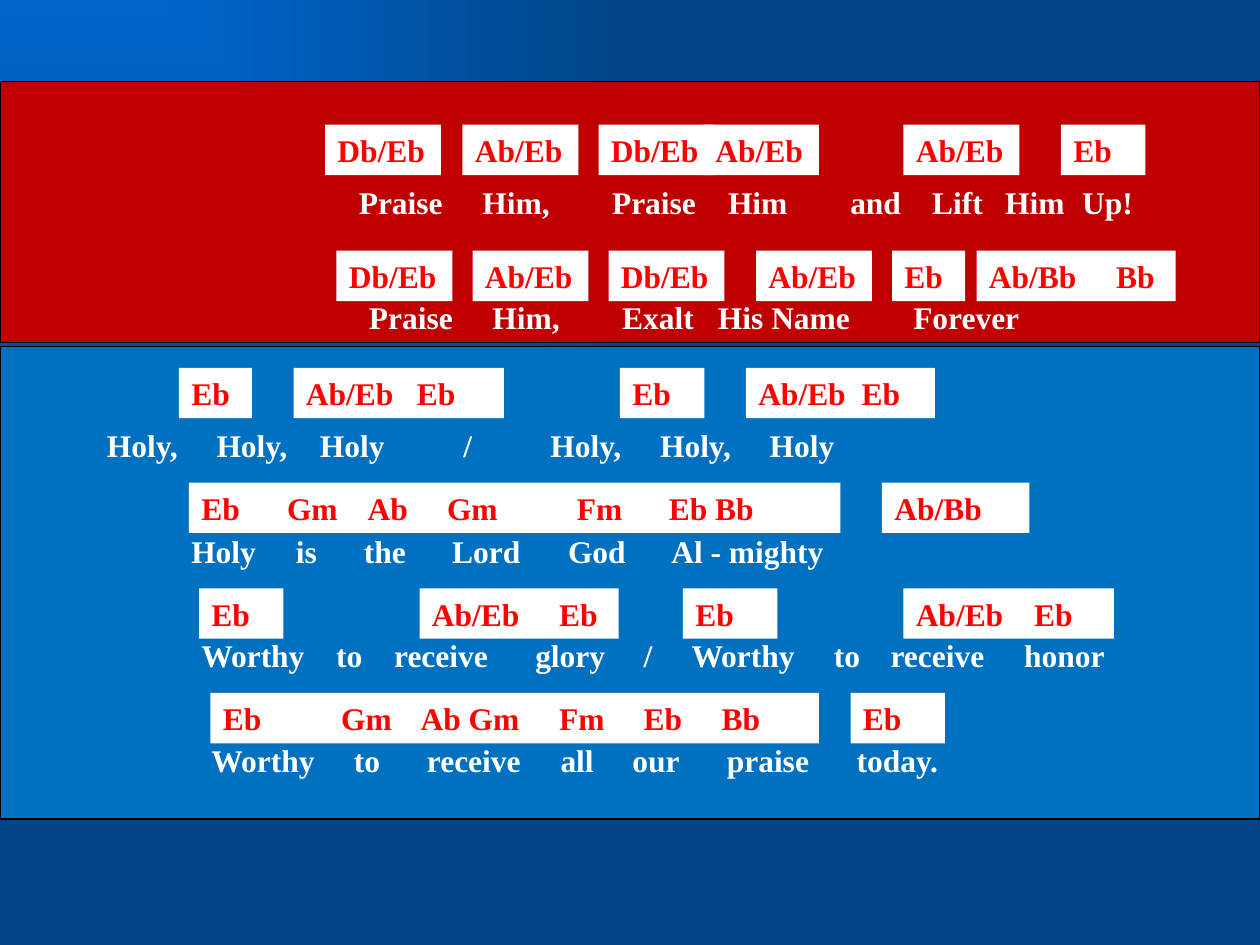
import dataclasses

import lxml.etree
import pptx
import pptx.dml.color
import pptx.enum.shapes
import pptx.enum.text
import pptx.oxml.ns
import pptx.shapes.autoshape
import pptx.slide
import pptx.util

Inches = pptx.util.Inches
qn = pptx.oxml.ns.qn


@dataclasses.dataclass(frozen=True)
class Theme:
    glow: str = "0066CC"
    backdrop: str = "004487"
    chorus: str = "C00000"
    verse: str = "0070C0"
    border: str = "000000"
    chord_fill: str = "FFFFFF"
    chord_text: str = "FF0000"
    lyric_text: str = "FFFFFF"
    font: str = "Times New Roman"
    text_size: float = 18
    border_width: float = 0.75


@dataclasses.dataclass(frozen=True)
class Section:
    top: float
    height: float
    color: str


@dataclasses.dataclass(frozen=True)
class Phrase:
    left: float
    width: float
    words: tuple[str, ...]
    stops: tuple[float, ...] = ()


@dataclasses.dataclass(frozen=True)
class SongLine:
    chord_top: float
    lyric_top: float
    lyric: Phrase
    chords: tuple[Phrase, ...]


THEME = Theme()
ROW_HEIGHT = 0.4
SLIDE_WIDTH = 10

SECTIONS = (
    Section(2.75, 3.75, THEME.verse),
    Section(0.65, 2.07, THEME.chorus),
)


def chord(left: float, width: float, *names: str, stops: tuple[float, ...] = ()) -> Phrase:
    return Phrase(left, width, names, stops)


SONG = (
    SongLine(
        0.99, 1.4,
        Phrase(2.75, 6.5, ("Praise", "Him,", "Praise", "Him", "and", "Lift", "Him", "Up!"),
               (0.98, 2.01, 2.93, 3.9, 4.55, 5.13, 5.74)),
        (chord(2.58, 0.92, "Db/Eb"), chord(3.67, 0.92, "Ab/Eb"),
         chord(4.75, 0.92, "Db/Eb"), chord(5.58, 0.92, "Ab/Eb"),
         chord(7.17, 0.92, "Ab/Eb"), chord(8.42, 0.67, "Eb")),
    ),
    SongLine(
        1.99, 2.32,
        Phrase(2.83, 6.5, ("Praise", "Him,", "Exalt", "His Name", "Forever"),
               (0.98, 2.01, 2.77, 4.32)),
        (chord(2.67, 0.92, "Db/Eb"), chord(3.75, 0.92, "Ab/Eb"),
         chord(4.83, 0.92, "Db/Eb"), chord(6, 0.92, "Ab/Eb"),
         chord(7.08, 0.58, "Eb"), chord(7.75, 1.58, "Ab/Bb", "Bb", stops=(1.01,))),
    ),
    SongLine(
        2.92, 3.33,
        Phrase(0.75, 7.42, ("Holy,", "Holy,", "Holy", "/", "Holy,", "Holy,", "Holy"),
               (0.87, 1.69, 2.83, 3.52, 4.39, 5.26)),
        (chord(1.42, 0.58, "Eb"), chord(2.33, 1.67, "Ab/Eb", "Eb", stops=(0.88,)),
         chord(4.92, 0.67, "Eb"), chord(5.92, 1.5, "Ab/Eb", "Eb", stops=(0.82,))),
    ),
    SongLine(
        3.83, 4.17,
        Phrase(1.42, 5.3, ("Holy", "is", "the", "Lord", "God", "Al - mighty"),
               (0.83, 1.37, 2.07, 2.99, 3.81)),
        (chord(1.5, 5.17, "Eb", "Gm", "Ab", "Gm", "Fm", "Eb Bb",
               stops=(0.68, 1.32, 1.95, 2.98, 3.71)),
         chord(7, 1.17, "Ab/Bb")),
    ),
    SongLine(
        4.67, 5,
        Phrase(1.5, 7.67,
               ("Worthy", "to", "receive", "glory", "/", "Worthy", "to", "receive", "honor"),
               (1.07, 1.53, 2.65, 3.51, 3.89, 5.02, 5.47, 6.53)),
        (chord(1.58, 0.67, "Eb"), chord(3.33, 1.58, "Ab/Eb", "Eb", stops=(1.01,)),
         chord(5.42, 0.75, "Eb"), chord(7.17, 1.67, "Ab/Eb", "Eb", stops=(0.94,))),
    ),
    SongLine(
        5.5, 5.83,
        Phrase(1.58, 7.92, ("Worthy", "to", "receive", "all", "our", "praise", "today."),
               (1.13, 1.71, 2.77, 3.34, 4.09, 5.12)),
        (chord(1.67, 4.83, "Eb", "Gm", "Ab Gm", "Fm", "Eb", "Bb",
               stops=(0.94, 1.57, 2.67, 3.34, 3.96)),
         chord(6.75, 0.75, "Eb")),
    ),
)


def rgb(color: str) -> pptx.dml.color.RGBColor:
    return pptx.dml.color.RGBColor.from_string(color)


def paint_background(slide: pptx.slide.Slide) -> None:
    fill = slide.background.fill
    fill.gradient()
    for stop, color in zip(fill.gradient_stops, (THEME.glow, THEME.backdrop)):
        stop.color.rgb = rgb(color)
    fill.gradient_stops[0].position = 0
    fill.gradient_stops[1].position = 1
    gradient = slide.background._cSld.find(".//" + qn("a:gradFill"))
    linear = gradient.find(qn("a:lin"))
    if linear is not None:
        gradient.remove(linear)
    spread = lxml.etree.SubElement(gradient, qn("a:path"), path="rect")
    lxml.etree.SubElement(spread, qn("a:fillToRect"), r="100000", b="100000")


def add_panel(slide: pptx.slide.Slide, left: float, top: float, width: float,
              height: float, color: str) -> pptx.shapes.autoshape.Shape:
    panel = slide.shapes.add_shape(
        pptx.enum.shapes.MSO_SHAPE.RECTANGLE,
        Inches(left), Inches(top), Inches(width), Inches(height))
    panel.shadow.inherit = False
    panel.fill.solid()
    panel.fill.fore_color.rgb = rgb(color)
    panel.line.fill.background()
    return panel


def add_section(slide: pptx.slide.Slide, section: Section) -> None:
    panel = add_panel(slide, 0, section.top, SLIDE_WIDTH, section.height, section.color)
    panel.line.color.rgb = rgb(THEME.border)
    panel.line.width = pptx.util.Pt(THEME.border_width)


def write_phrase(holder: pptx.shapes.autoshape.Shape, phrase: Phrase, color: str) -> None:
    frame = holder.text_frame
    frame.word_wrap = True
    frame.auto_size = pptx.enum.text.MSO_AUTO_SIZE.SHAPE_TO_FIT_TEXT
    frame.vertical_anchor = pptx.enum.text.MSO_ANCHOR.TOP
    paragraph = frame.paragraphs[0]
    paragraph.text = "\t".join(phrase.words)
    paragraph.alignment = pptx.enum.text.PP_ALIGN.LEFT
    paragraph.font.name = THEME.font
    paragraph.font.size = pptx.util.Pt(THEME.text_size)
    paragraph.font.bold = True
    paragraph.font.color.rgb = rgb(color)
    if phrase.stops:
        tabs = lxml.etree.Element(qn("a:tabLst"))
        for stop in phrase.stops:
            lxml.etree.SubElement(tabs, qn("a:tab"), pos=str(Inches(stop)), algn="l")
        paragraph._p.get_or_add_pPr().insert(0, tabs)


def add_song_line(slide: pptx.slide.Slide, line: SongLine) -> None:
    lyric = slide.shapes.add_textbox(
        Inches(line.lyric.left), Inches(line.lyric_top),
        Inches(line.lyric.width), Inches(ROW_HEIGHT))
    write_phrase(lyric, line.lyric, THEME.lyric_text)
    for phrase in line.chords:
        label = add_panel(slide, phrase.left, line.chord_top, phrase.width,
                          ROW_HEIGHT, THEME.chord_fill)
        write_phrase(label, phrase, THEME.chord_text)


def main() -> None:
    deck = pptx.Presentation()
    deck.slide_width, deck.slide_height = Inches(SLIDE_WIDTH), Inches(7.5)
    slide = deck.slides.add_slide(deck.slide_layouts[6])
    paint_background(slide)
    for section in SECTIONS:
        add_section(slide, section)
    for line in SONG:
        add_song_line(slide, line)
    deck.save("out.pptx")


if __name__ == "__main__":
    main()
